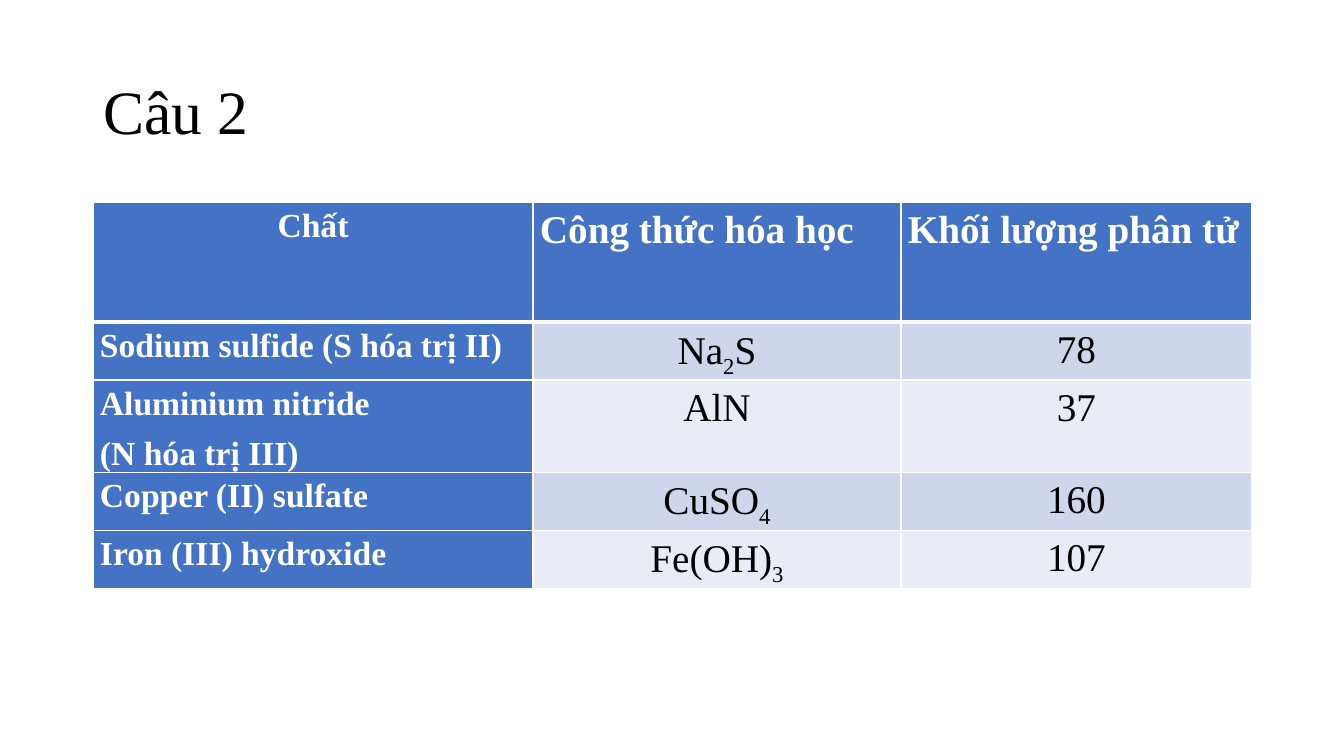
from itertools import groupby

from lxml.etree import SubElement
from pptx import Presentation
from pptx.dml.color import RGBColor
from pptx.enum.text import MSO_ANCHOR, PP_ALIGN
from pptx.oxml.ns import qn
from pptx.util import Pt

FONT = "Times New Roman"
BLACK = RGBColor(0x00, 0x00, 0x00)
WHITE = RGBColor(0xFF, 0xFF, 0xFF)
BLUE = RGBColor(0x44, 0x72, 0xC4)
BANDS = [RGBColor(0xCF, 0xD5, 0xEA), RGBColor(0xE9, 0xEB, 0xF5)]

COLUMN_WIDTHS = [440, 368, 351]
ROW_HEIGHTS = [120, 58, 92, 58, 58]
HEADERS = ["Chất", "Công thức hóa học", "Khối lượng phân tử"]
SUBSTANCES = [
    ("Sodium sulfide (S hóa trị II)", "Na2S", "78"),
    ("Aluminium nitride\n(N hóa trị III)", "AlN", "37"),
    ("Copper (II) sulfate", "CuSO4", "160"),
    ("Iron (III) hydroxide", "Fe(OH)3", "107"),
]


def px(n):
    return round(n * 914400 / 100.8)


def write(tf, text, size, color=BLACK, bold=False, align=PP_ALIGN.LEFT,
          line=1.15, before=2, after=3, subscripts=False):
    """Fill a text frame, one paragraph a line; digits may become subscripts."""
    for i, content in enumerate(text.split("\n")):
        p = tf.add_paragraph() if i else tf.paragraphs[0]
        p.alignment = align
        p.line_spacing = line
        p.space_before, p.space_after = Pt(before), Pt(after)
        pieces = [(False, content)]
        if subscripts:
            pieces = groupby(content, str.isdigit)
        for lowered, piece in pieces:
            r = p.add_run()
            r.text = "".join(piece)
            r.font.name, r.font.size = FONT, Pt(size)
            r.font.bold = bold
            r.font.color.rgb = color
            if lowered:
                r.font._element.set("baseline", "-25000")


def set_borders(cell, top=1, bottom=1):
    """Draw white cell borders; widths are in points."""
    tc_pr = cell._tc.get_or_add_tcPr()
    widths = {"a:lnL": 1, "a:lnR": 1, "a:lnT": top, "a:lnB": bottom}
    for tag, width in widths.items():
        ln = SubElement(tc_pr, qn(tag), w=str(Pt(width)))
        fill = SubElement(ln, qn("a:solidFill"))
        SubElement(fill, qn("a:srgbClr"), val=str(WHITE))


def format_cell(cell, fill, top=1, bottom=1):
    cell.margin_left = cell.margin_right = px(7)
    cell.margin_top = cell.margin_bottom = 0
    set_borders(cell, top, bottom)
    cell.fill.solid()
    cell.fill.fore_color.rgb = fill


def add_title(s, text):
    title = s.shapes.title
    title.left, title.top = px(93), px(43)
    title.width, title.height = px(1159), px(143)
    tf = title.text_frame
    tf.vertical_anchor = MSO_ANCHOR.MIDDLE
    write(tf, text, 44, line=0.9, before=0, after=0)


def add_substance_table(s):
    frame = s.shapes.add_table(len(ROW_HEIGHTS), len(COLUMN_WIDTHS), px(93), px(202),
                               px(sum(COLUMN_WIDTHS)), px(sum(ROW_HEIGHTS)))
    table = frame.table
    table.first_col = True
    for column, width in zip(table.columns, COLUMN_WIDTHS):
        column.width = px(width)
    for row, height in zip(table.rows, ROW_HEIGHTS):
        row.height = px(height)

    for j, header in enumerate(HEADERS):
        cell = table.cell(0, j)
        format_cell(cell, BLUE, bottom=3)
        write(cell.text_frame, header, 28 if j else 24, WHITE, bold=True,
              align=PP_ALIGN.LEFT if j else PP_ALIGN.CENTER)

    for i, (name, formula, mass) in enumerate(SUBSTANCES, 1):
        top = 3 if i == 1 else 1
        cell = table.cell(i, 0)
        format_cell(cell, BLUE, top)
        write(cell.text_frame, name, 24, WHITE, bold=True)
        for j, value in enumerate((formula, mass), 1):
            cell = table.cell(i, j)
            format_cell(cell, BANDS[(i - 1) % 2], top)
            write(cell.text_frame, value, 28, align=PP_ALIGN.CENTER,
                  subscripts=value == formula)


def main():
    prs = Presentation()
    prs.slide_width, prs.slide_height = px(1344), px(756)
    s = prs.slides.add_slide(prs.slide_layouts[5])
    add_title(s, "Câu 2")
    add_substance_table(s)
    prs.save("out.pptx")


if __name__ == "__main__":
    main()
